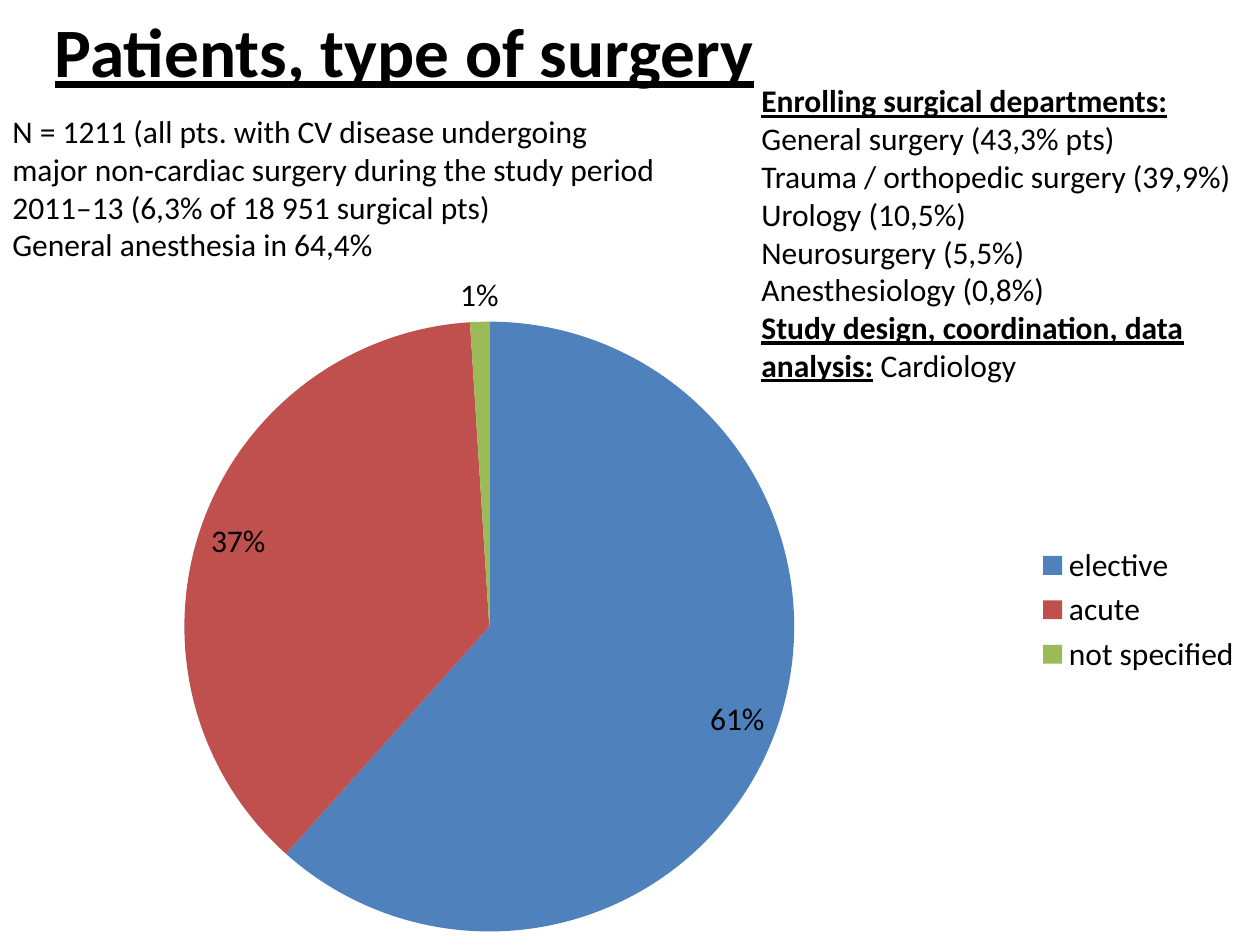
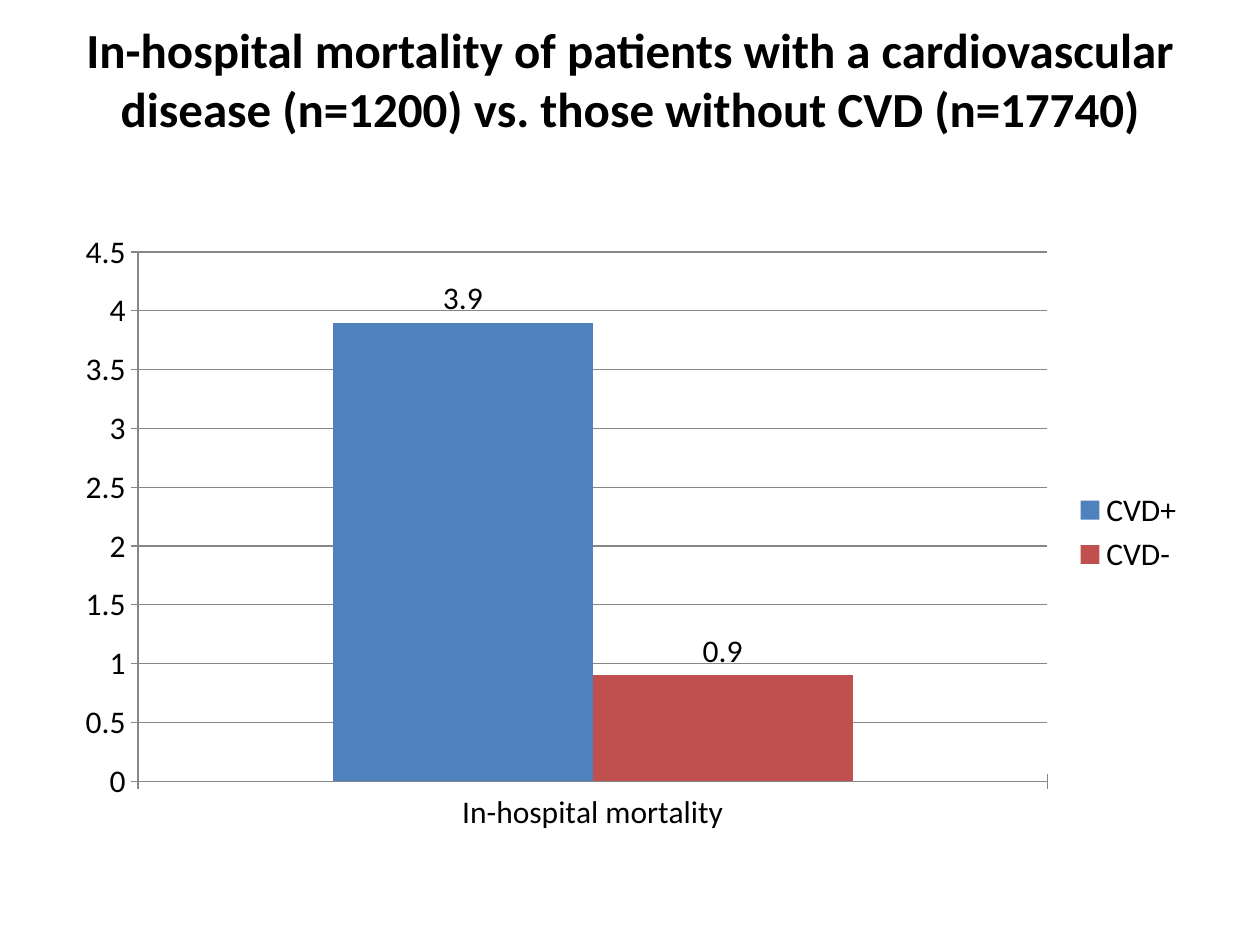
from lxml import etree
from pptx import Presentation
from pptx.chart.data import CategoryChartData
from pptx.dml.color import RGBColor
from pptx.enum.chart import XL_CHART_TYPE, XL_LABEL_POSITION, XL_LEGEND_POSITION, XL_TICK_MARK
from pptx.enum.text import MSO_ANCHOR, PP_ALIGN
from pptx.oxml.ns import qn
from pptx.util import Pt

PIE = XL_CHART_TYPE.PIE
COLUMNS = XL_CHART_TYPE.COLUMN_CLUSTERED
BEST_FIT = XL_LABEL_POSITION.BEST_FIT
OUTSIDE_END = XL_LABEL_POSITION.OUTSIDE_END
LEGEND_RIGHT = XL_LEGEND_POSITION.RIGHT
TICK_CROSS = XL_TICK_MARK.CROSS
MIDDLE = MSO_ANCHOR.MIDDLE
TOP = MSO_ANCHOR.TOP
CENTER = PP_ALIGN.CENTER
LEFT = PP_ALIGN.LEFT

FONT = "Calibri"
BODY_SIZE = 18
BLACK = "000000"
AXIS_GREY = "868686"
SERIES_COLORS = ["4F81BD", "C0504D", "9BBB59"]

PLAIN, BOLD, HEADING = (False, False), (True, False), (True, True)

COHORT = [
    [("N = 1211 (all pts. with CV disease undergoing major non-cardiac surgery "
      "during the study period 2011–13 (6,3% of 18 951 surgical pts)", PLAIN)],
    [("General anesthesia in 64,4%", PLAIN)],
]
DEPARTMENTS = [
    [("Enrolling surgical departments:", HEADING)],
    [("General surgery (43,3% pts)", PLAIN)],
    [("Trauma / orthopedic surgery (39,9%)", PLAIN)],
    [("Urology (10,5%)", PLAIN)],
    [("Neurosurgery (5,5%)", PLAIN)],
    [("Anesthesiology (0,8%)", PLAIN)],
    [("Study design, coordination, data analysis:", HEADING), (" Cardiology", PLAIN)],
]


def color(value):
    return RGBColor.from_string(value)


def style_font(font, size):
    font.name = FONT
    font.size = Pt(size)
    font.color.rgb = color(BLACK)


def add_text(page, box, paragraphs, size=BODY_SIZE, align=LEFT, anchor=TOP):
    frame = page.shapes.add_textbox(*map(Pt, box)).text_frame
    frame.word_wrap = True
    frame.vertical_anchor = anchor
    for index, spans in enumerate(paragraphs):
        para = frame.add_paragraph() if index else frame.paragraphs[0]
        para.alignment = align
        for text, (bold, underline) in spans:
            span = para.add_run()
            span.text = text
            style_font(span.font, size)
            span.font.bold = bold
            span.font.underline = underline


def add_title(page, box, text, size, style):
    add_text(page, box, [[(text, style)]], size, CENTER, MIDDLE)


def add_chart(page, box, kind, categories, series):
    data = CategoryChartData()
    data.categories = categories
    for name, values in series:
        data.add_series(name, values)
    chart = page.shapes.add_chart(kind, *map(Pt, box), data).chart
    style_font(chart.font, BODY_SIZE)
    chart.has_title = False
    chart.has_legend = True
    chart.legend.position = LEGEND_RIGHT
    chart.legend.include_in_layout = False
    return chart


def fill(part, value):
    part.format.fill.solid()
    part.format.fill.fore_color.rgb = color(value)


def show_values(labels, position):
    style_font(labels.font, BODY_SIZE)
    labels.show_value = True
    labels.position = position


def place_plot(chart, left, top, width, height):
    plot_area = chart.plots[0]._element.getparent()
    for old in plot_area.findall(qn("c:layout")):
        plot_area.remove(old)
    layout = etree.Element(qn("c:layout"))
    plot_area.insert(0, layout)
    manual = etree.SubElement(layout, qn("c:manualLayout"))
    settings = [("layoutTarget", "inner"), ("xMode", "edge"), ("yMode", "edge"),
                ("x", left), ("y", top), ("w", width), ("h", height)]
    for tag, value in settings:
        etree.SubElement(manual, qn("c:" + tag)).set("val", str(value))


def add_surgery_pie(page, box):
    chart = add_chart(page, box, PIE, ["elective", "acute", "not specified"],
                      [("Series 1", [61, 37, 1])])
    place_plot(chart, 0.14, 0.07, 0.5, 0.91)
    plot = chart.plots[0]
    plot.vary_by_categories = True
    for index, value in enumerate(SERIES_COLORS):
        fill(plot.series[0].points[index], value)
    labels = plot.series[0].data_labels
    show_values(labels, BEST_FIT)
    labels.number_format = '0"%"'
    labels.number_format_is_linked = False


def style_line(line):
    line.color.rgb = color(AXIS_GREY)
    line.width = Pt(0.75)


def add_mortality_columns(page, box):
    chart = add_chart(page, box, COLUMNS, ["In-hospital mortality"],
                      [("CVD+", [3.9]), ("CVD-", [0.9])])
    plot = chart.plots[0]
    plot.vary_by_categories = False
    plot.gap_width = 150
    for series, value in zip(plot.series, SERIES_COLORS):
        fill(series, value)
    with_disease, without_disease = plot.series
    with_disease.points[0].data_label.position = OUTSIDE_END
    show_values(without_disease.data_labels, OUTSIDE_END)
    for axis in (chart.category_axis, chart.value_axis):
        style_line(axis.format.line)
        style_font(axis.tick_labels.font, BODY_SIZE)
        axis.major_tick_mark = TICK_CROSS
    chart.value_axis.has_major_gridlines = True
    style_line(chart.value_axis.major_gridlines.format.line)


def build_surgery_page(page, width, height):
    add_title(page, (0, 0, 462, 57), "Patients, type of surgery", 39.6, HEADING)
    add_surgery_pie(page, (0, 157, width - 3, height - 157))
    add_text(page, (0, 60.5, 388, 94), COHORT)
    add_text(page, (width - 292, 43, 292, 181), DEPARTMENTS)


def build_mortality_page(page, width, height):
    add_title(page, (0, 0, width, 90),
              "In-hospital mortality of patients with a cardiovascular disease "
              "(n=1200) vs. those without CVD (n=17740)", 28, BOLD)
    add_mortality_columns(page, (36, 126, width - 72, height - 183.6))


def main():
    deck = Presentation()
    width, height = 720, 540
    deck.slide_width, deck.slide_height = Pt(width), Pt(height)
    for build in (build_surgery_page, build_mortality_page):
        build(deck.slides.add_slide(deck.slide_layouts[6]), width, height)
    deck.save("out.pptx")


if __name__ == "__main__":
    main()
